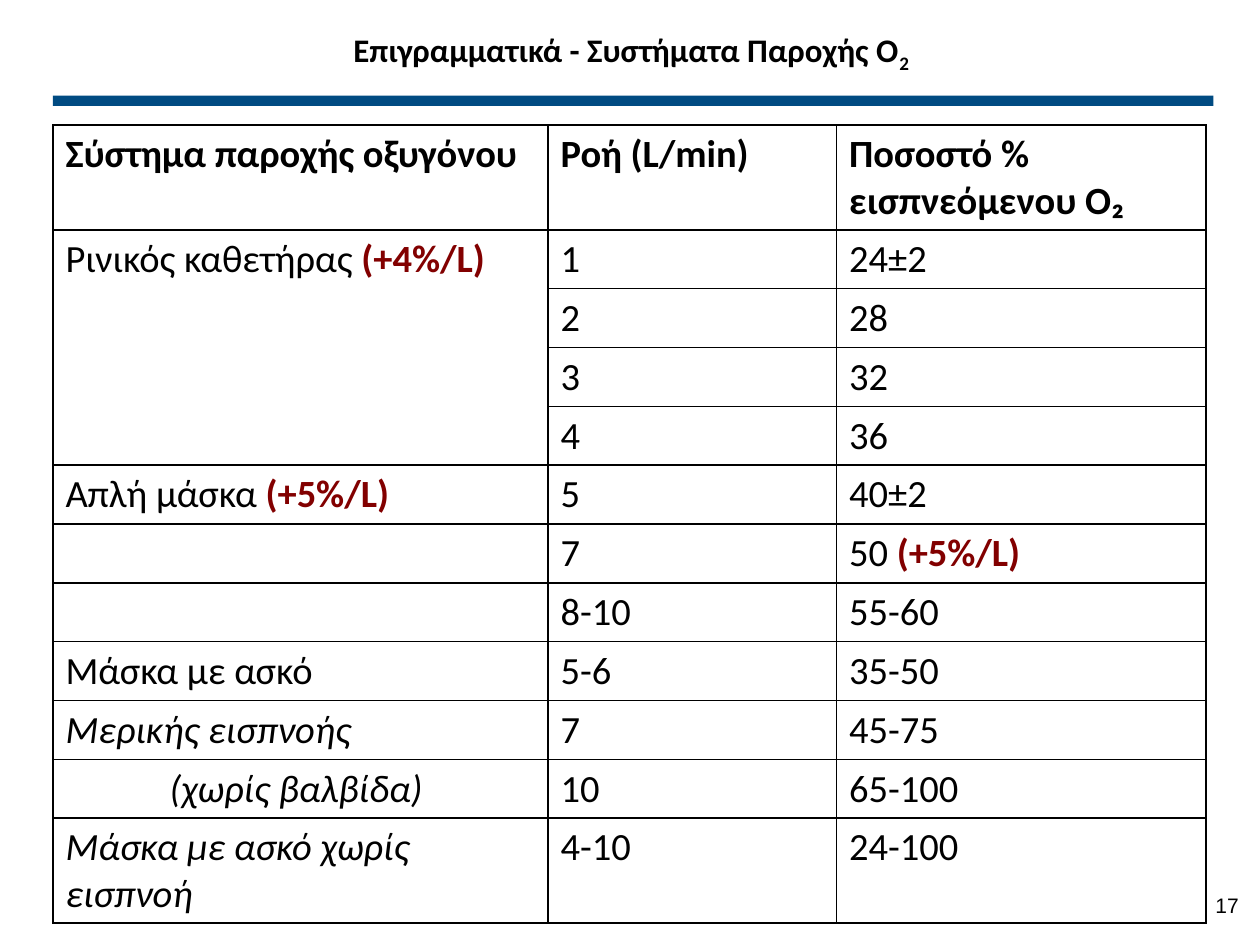
"""Build a one-slide table of oxygen delivery systems."""
from lxml import etree
from pptx import Presentation
from pptx.dml.color import RGBColor
from pptx.enum.shapes import MSO_SHAPE
from pptx.enum.text import MSO_ANCHOR, PP_ALIGN
from pptx.oxml.ns import qn
from pptx.util import Inches, Pt

RECTANGLE = MSO_SHAPE.RECTANGLE
MIDDLE = MSO_ANCHOR.MIDDLE
LEFT, CENTER, RIGHT = PP_ALIGN.LEFT, PP_ALIGN.CENTER, PP_ALIGN.RIGHT

THEME = {
    "ink": "000000", "accent": "820000", "bar": "004B82",
    "border": Pt(0.96),
}
STYLES = {
    "title": {"name": "Calibri", "size": Pt(18.8), "bold": True},
    "body": {"name": "Calibri", "size": Pt(22), "bold": False},
    "head": {"name": "Calibri", "size": Pt(22), "bold": True},
    "rate": {"name": "Calibri", "size": Pt(22), "bold": True},
    "italic": {"name": "Calibri", "size": Pt(22), "italic": True},
    "number": {"name": "Arial", "size": Pt(12)},
}
COLORS = {"rate": THEME["accent"]}

TITLE = [("Επιγραμματικά - Συστήματα Παροχής Ο", "title"), ("2", "title")]
PAGE_NUMBER = [("17", "number")]
HEADINGS = ["Σύστημα παροχής οξυγόνου", "Ροή (L/min)", "Ποσοστό % εισπνεόμενου O₂"]
SYSTEMS = [
    ([("Ρινικός καθετήρας ", "body"), ("(+4%/L)", "rate")], "1", "24±2"),
    ([], "2", "28"),
    ([], "3", "32"),
    ([], "4", "36"),
    ([("Απλή μάσκα ", "body"), ("(+5%/L)", "rate")], "5", "40±2"),
    ([], "7", [("50 ", "body"), ("(+5%/L)", "rate")]),
    ([], "8-10", "55-60"),
    ("Μάσκα με ασκό", "5-6", "35-50"),
    ([("Μερικής εισπνοής", "italic")], "7", "45-75"),
    ([("(χωρίς βαλβίδα) ", "italic")], "10", "65-100"),
    ([("Μάσκα με ασκό χωρίς εισπνοή", "italic")], "4-10", "24-100"),
]
CATHETER_ROWS = (1, 4)
CENTERED_CELL = (10, 0)
COLUMN_WIDTHS = [3.93, 2.29, 2.93]
ROW_HEIGHTS = [0.71] + [0.41] * 10 + [0.71]
TABLE_LEFT, TABLE_TOP = 0.42, 0.99


def write(frame, spans, alignment=LEFT):
    para = frame.paragraphs[0]
    para.alignment = alignment
    for text, style in spans:
        span = para.add_run()
        span.text = text
        for key, value in STYLES[style].items():
            setattr(span.font, key, value)
        span.font.color.rgb = RGBColor.from_string(COLORS.get(style, THEME["ink"]))
    return para


def add_text(page, area, spans, alignment):
    box = page.shapes.add_textbox(*map(Inches, area))
    box.text_frame.word_wrap = True
    box.text_frame.vertical_anchor = MIDDLE
    return write(box.text_frame, spans, alignment)


def outline(cell):
    properties = cell._tc.get_or_add_tcPr()
    for side in ("lnL", "lnR", "lnT", "lnB"):
        line = etree.SubElement(properties, qn(f"a:{side}"), w=str(THEME["border"]))
        fill = etree.SubElement(line, qn("a:solidFill"))
        etree.SubElement(fill, qn("a:srgbClr"), val=THEME["ink"])
    cell.fill.background()


def add_systems_table(page):
    rows = [[[(text, "head")] for text in HEADINGS]] + SYSTEMS
    area = (TABLE_LEFT, TABLE_TOP, sum(COLUMN_WIDTHS), sum(ROW_HEIGHTS))
    table = page.shapes.add_table(len(rows), len(HEADINGS), *map(Inches, area)).table
    table.first_row = table.horz_banding = False
    for column, width in zip(table.columns, COLUMN_WIDTHS):
        column.width = Inches(width)
    for row, height in zip(table.rows, ROW_HEIGHTS):
        row.height = Inches(height)
    for row_index, row in enumerate(rows):
        for column_index, content in enumerate(row):
            cell = table.cell(row_index, column_index)
            spans = [(content, "body")] if isinstance(content, str) else content
            centered = (row_index, column_index) == CENTERED_CELL
            write(cell.text_frame, spans, CENTER if centered else LEFT)
            outline(cell)
    first, last = CATHETER_ROWS
    table.cell(first, 0).merge(table.cell(last, 0))


def main():
    deck = Presentation()
    deck.slide_width, deck.slide_height = Inches(10), Inches(7.5)
    page = deck.slides.add_slide(deck.slide_layouts[6])
    title = add_text(page, (0.51, 0, 9, 0.83), TITLE, CENTER)
    title.runs[-1]._r.get_or_add_rPr().set("baseline", "-25000")
    add_systems_table(page)
    bar = page.shapes.add_shape(RECTANGLE, *map(Inches, (TABLE_LEFT, 0.76, 9.21, 0.08)))
    bar.shadow.inherit = False
    bar.fill.solid()
    bar.fill.fore_color.rgb = RGBColor.from_string(THEME["bar"])
    bar.line.fill.background()
    add_text(page, (7.6, 6.98, 2.33, 0.4), PAGE_NUMBER, RIGHT)
    deck.save("out.pptx")


if __name__ == "__main__":
    main()
